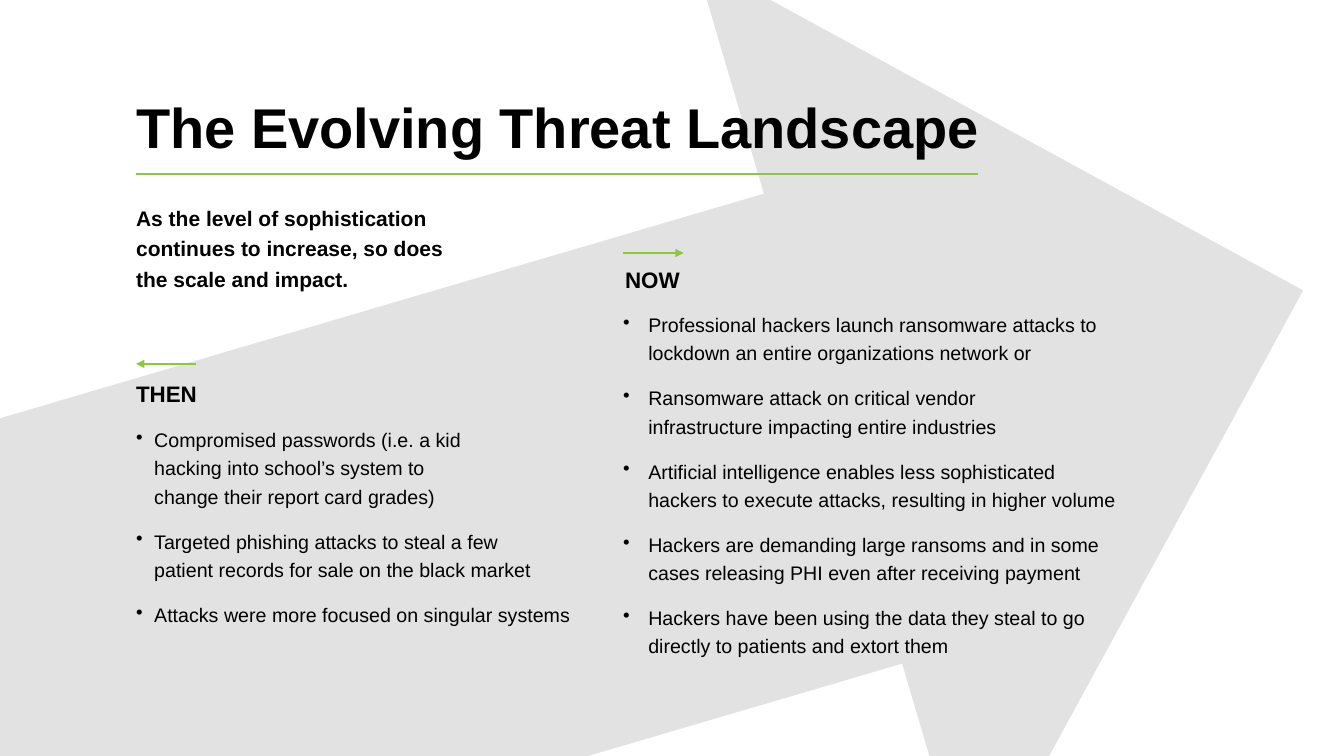
from copy import deepcopy
from dataclasses import dataclass

from pptx import Presentation
from pptx.dml.color import RGBColor
from pptx.enum.shapes import MSO_CONNECTOR as Connector
from pptx.enum.shapes import MSO_SHAPE as Preset
from pptx.enum.text import MSO_ANCHOR as Anchor
from pptx.enum.text import MSO_AUTO_SIZE as AutoSize
from pptx.enum.text import PP_ALIGN as Align
from pptx.oxml.ns import qn
from pptx.oxml.xmlchemy import OxmlElement
from pptx.slide import Slide
from pptx.text.text import TextFrame
from pptx.util import Inches, Pt

COLORS = {"text": "000000", "arrow": "E2E2E2", "accent": "8DC63F"}
FONT = "Arial"
LEFT = 1.35


@dataclass
class Box:
    left: float
    top: float
    width: float
    height: float


@dataclass
class Era:
    heading: str
    heading_box: Box
    list_box: Box
    indent: float
    arrow_start: float
    arrow_end: float
    arrow_y: float
    points: list[str]


ERAS = [
    Era("THEN", Box(LEFT, 3.77, 1.77, 0.3), Box(LEFT, 4.2, 4.36, 2.99), 0.18,
        1.94, LEFT, 3.61, [
            "Compromised passwords (i.e. a kid \nhacking into school’s system to \n"
            "change their report card grades)",
            "Targeted phishing attacks to steal a few \n"
            "patient records for sale on the black market",
            "Attacks were more focused on singular systems",
        ]),
    Era("NOW", Box(6.2, 2.64, 1.65, 0.33), Box(6.18, 3.06, 4.92, 2.77), 0.25,
        6.18, 6.78, 2.51, [
            "Professional hackers launch ransomware attacks to lockdown "
            "an entire organizations network or",
            "Ransomware attack on critical vendor \n"
            "infrastructure impacting entire industries",
            "Artificial intelligence enables less sophisticated hackers "
            "to execute attacks, resulting in higher volume",
            "Hackers are demanding large ransoms and in some cases "
            "releasing PHI even after receiving payment",
            "Hackers have been using the data they steal to go directly "
            "to patients and extort them",
        ]),
]


def color(name: str) -> RGBColor:
    return RGBColor.from_string(COLORS[name])


def write_text(frame: TextFrame, *paragraphs: str, size: float, bold: bool = False,
               spacing: float = 1.0, after: float = 0, indent: float = 0) -> None:
    """Fill a frame; an indent above zero makes its paragraphs bullets."""
    frame.word_wrap = True
    frame.auto_size = AutoSize.NONE
    frame.vertical_anchor = Anchor.TOP
    frame.margin_left = frame.margin_right = frame.margin_top = frame.margin_bottom = 0
    for index, text in enumerate(paragraphs):
        para = frame.add_paragraph() if index else frame.paragraphs[0]
        para.text = text
        para.alignment = Align.LEFT
        para.line_spacing = spacing
        para.space_before = Pt(0)
        para.space_after = Pt(after)
        for span in para.runs:
            span.font.name = FONT
            span.font.size = Pt(size)
            span.font.bold = bold
            span.font.color.rgb = color("text")
        for line_break in para._p.findall(qn("a:br")):
            line_break.append(deepcopy(para.runs[0]._r.rPr))
        if indent:
            properties = para._p.get_or_add_pPr()
            properties.set("marL", str(Inches(indent)))
            properties.set("indent", str(-Inches(indent)))
            bullet = OxmlElement("a:buChar")
            bullet.set("char", "•")
            properties.append(bullet)


def place(shape, box: Box) -> None:
    shape.left, shape.top = Inches(box.left), Inches(box.top)
    shape.width, shape.height = Inches(box.width), Inches(box.height)


def add_text(slide: Slide, box: Box, *paragraphs: str, **text_format) -> None:
    shape = slide.shapes.add_textbox(0, 0, 0, 0)
    place(shape, box)
    write_text(shape.text_frame, *paragraphs, **text_format)


def add_rule(slide: Slide, start: float, end: float, y: float, arrow: bool = False) -> None:
    rule = slide.shapes.add_connector(
        Connector.STRAIGHT, Inches(start), Inches(y), Inches(end), Inches(y))
    rule.line.color.rgb = color("accent")
    rule.line.width = Pt(1.5)
    if arrow:
        head = OxmlElement("a:tailEnd")
        head.set("type", "triangle")
        rule.line._get_or_add_ln().append(head)
    rule._element.spPr.append(OxmlElement("a:effectLst"))


def add_background_arrow(slide: Slide) -> None:
    arrow = slide.shapes.add_shape(Preset.RIGHT_ARROW, 0, 0, 0, 0)
    place(arrow, Box(-2.76, 0.28, 16.01, 9.72))
    arrow.rotation = 343.6
    arrow.shadow.inherit = False
    arrow.fill.solid()
    arrow.fill.fore_color.rgb = color("arrow")
    arrow.line.fill.background()
    slide.shapes.title._element.addprevious(arrow._element)


def add_era(slide: Slide, era: Era) -> None:
    add_text(slide, era.list_box, *era.points, size=14, spacing=1.2, after=12,
             indent=era.indent)
    add_text(slide, era.heading_box, era.heading, size=16, bold=True)
    add_rule(slide, era.arrow_start, era.arrow_end, era.arrow_y, arrow=True)


def main() -> None:
    deck = Presentation()
    deck.slide_width, deck.slide_height = Inches(13.33), Inches(7.5)
    page = deck.slides.add_slide(deck.slide_layouts[5])
    add_background_arrow(page)
    title = page.shapes.title
    place(title, Box(LEFT, 0.99, 9.36, 0.52))
    write_text(title.text_frame, "The Evolving Threat Landscape",
               size=40, bold=True, spacing=0.9)
    add_rule(page, LEFT, 9.7, 1.73)
    add_text(page, Box(LEFT, 1.99, 3.13, 0.61),
             "As the level of sophistication continues to increase, "
             "so does the scale and impact.", size=15, bold=True, spacing=1.2)
    for era in ERAS:
        add_era(page, era)
    deck.save("out.pptx")


if __name__ == "__main__":
    main()
